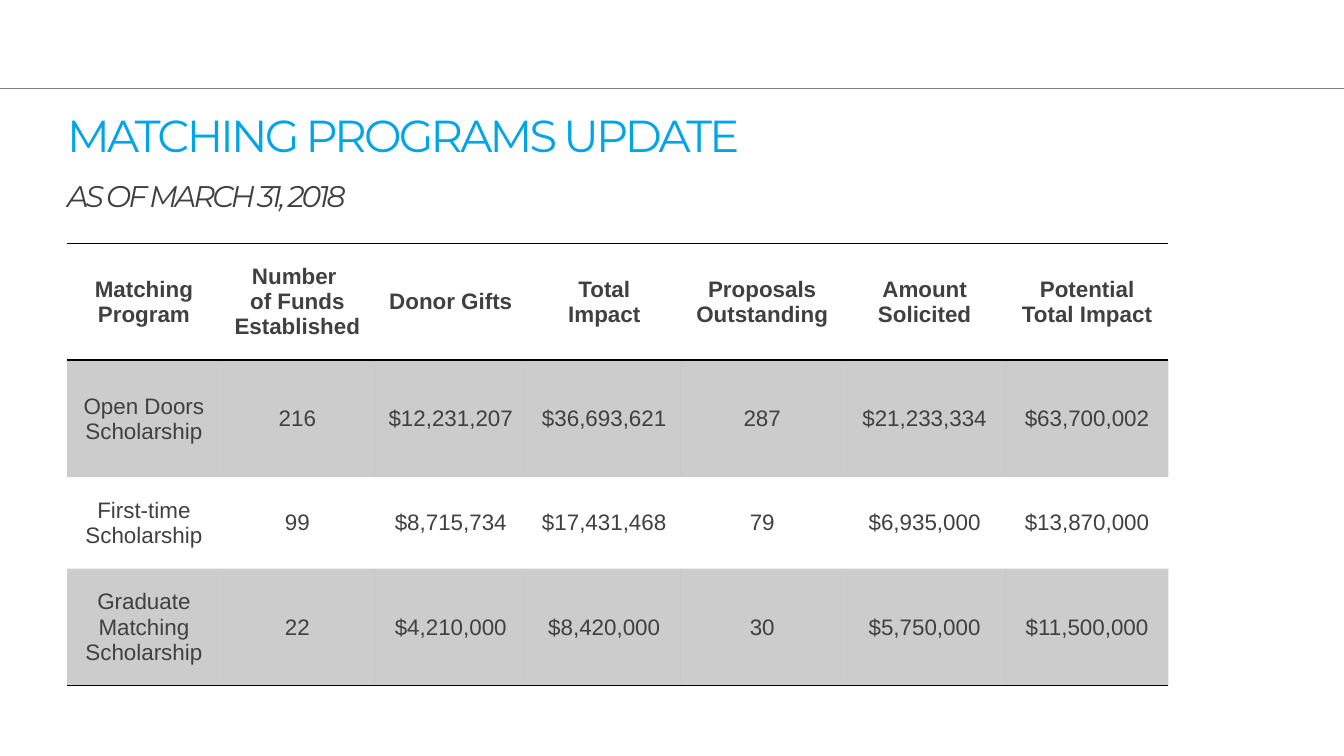
from dataclasses import dataclass

from lxml.etree import SubElement
from pptx import Presentation
from pptx.dml.color import RGBColor
from pptx.enum.shapes import MSO_CONNECTOR
from pptx.enum.text import MSO_ANCHOR, PP_ALIGN
from pptx.oxml import parse_xml
from pptx.oxml.ns import nsdecls, qn
from pptx.slide import Slide
from pptx.table import _Cell
from pptx.util import Cm, Pt

BLUE = RGBColor(0x00, 0xA5, 0xE8)
DARK = RGBColor(0x40, 0x40, 0x40)
GRAY = RGBColor(0x80, 0x80, 0x80)
BLACK = RGBColor(0x00, 0x00, 0x00)
NO_STYLE = "{2D5ABB26-0587-4C30-8999-92F81FD0307C}"
LEFT = Cm(1.27)


@dataclass(frozen=True)
class TitleLine:
    text: str
    size: int
    color: RGBColor
    italic: bool


@dataclass(frozen=True)
class TableRow:
    height: float
    texts: tuple[str, ...]
    bold: bool = False
    shaded: bool = False
    borders: tuple[str, ...] = ()


TITLE = (
    TitleLine("MATCHING PROGRAMS UPDATE", 24, BLUE, False),
    TitleLine("AS OF MARCH 31, 2018", 16, DARK, True),
)
COLUMNS = (2.9,) * 4 + (3.07,) * 3
ROWS = (
    TableRow(2.21, ("Matching Program", "Number \vof Funds Established", "Donor Gifts",
                    "Total Impact", "Proposals Outstanding", "Amount Solicited",
                    "Potential Total Impact"), bold=True, borders=("lnT", "lnB")),
    TableRow(2.21, ("Open Doors Scholarship", "216", "$12,231,207", "$36,693,621",
                    "287", "$21,233,334", "$63,700,002"), shaded=True),
    TableRow(1.73, ("First-time Scholarship", "99", "$8,715,734", "$17,431,468",
                    "79", "$6,935,000", "$13,870,000")),
    TableRow(2.21, ("Graduate Matching Scholarship", "22", "$4,210,000", "$8,420,000",
                    "30", "$5,750,000", "$11,500,000"), shaded=True, borders=("lnB",)),
)


def add_rule(s: Slide, y: Cm, width: Cm) -> None:
    line = s.shapes.add_connector(MSO_CONNECTOR.STRAIGHT, 0, y, width, y)
    line.line.color.rgb = GRAY
    line.line.width = Pt(0.75)
    SubElement(line._element.spPr, qn("a:effectLst"))


def add_title(s: Slide, lines: tuple[TitleLine, ...]) -> None:
    sp = s.shapes.add_textbox(LEFT, Cm(2.06), Cm(22.86), Cm(2.11))
    tf = sp.text_frame
    tf.word_wrap = True
    tf.margin_left = tf.margin_right = tf.margin_top = tf.margin_bottom = 0
    p = tf.paragraphs[0]
    p.line_spacing = Pt(28)
    for i, line in enumerate(lines):
        if i:
            p.add_line_break()
        r = p.add_run()
        r.text = line.text
        r.font.name = "Montserrat"
        r.font.size = Pt(line.size)
        r.font.italic = line.italic
        r.font.color.rgb = line.color
        r._r.get_or_add_rPr().set("spc", "-150")


def fill_cell(cell: _Cell, text: str, row: TableRow) -> None:
    cell.text = text
    cell.vertical_anchor = MSO_ANCHOR.MIDDLE
    p = cell.text_frame.paragraphs[0]
    p.alignment = PP_ALIGN.CENTER
    p.font.name = "Arial"
    p.font.size = Pt(12)
    p.font.bold = row.bold
    p.font.color.rgb = DARK
    tc_pr = cell._tc.get_or_add_tcPr()
    for side in row.borders:
        tc_pr.append(parse_xml(
            f'<a:{side} {nsdecls("a")} w="{Pt(1)}"><a:solidFill>'
            f'<a:srgbClr val="{BLACK}"/></a:solidFill></a:{side}>'))
    if row.shaded:
        cell.fill.solid()
        cell.fill.fore_color.rgb = BLACK
        color = tc_pr.find(qn("a:solidFill")).find(qn("a:srgbClr"))
        SubElement(color, qn("a:alpha")).set("val", "20000")
    else:
        cell.fill.background()


def add_programs_table(s: Slide, columns: tuple[float, ...], rows: tuple[TableRow, ...]) -> None:
    width, height = Cm(sum(columns)), Cm(sum(row.height for row in rows))
    frame = s.shapes.add_table(len(rows), len(columns), LEFT, Cm(4.6), width, height)
    table = frame.table
    table.horz_banding = False
    table._tbl.tblPr.find(qn("a:tableStyleId")).text = NO_STYLE
    for column, column_width in zip(table.columns, columns):
        column.width = Cm(column_width)
    for i, row in enumerate(rows):
        table.rows[i].height = Cm(row.height)
        for j, text in enumerate(row.texts):
            fill_cell(table.cell(i, j), text, row)


def main() -> None:
    prs = Presentation()
    prs.slide_width, prs.slide_height = Cm(25.4), Cm(14.29)
    s = prs.slides.add_slide(prs.slide_layouts[6])
    add_rule(s, Cm(1.67), prs.slide_width)
    add_title(s, TITLE)
    add_programs_table(s, COLUMNS, ROWS)
    prs.save("out.pptx")


if __name__ == "__main__":
    main()
